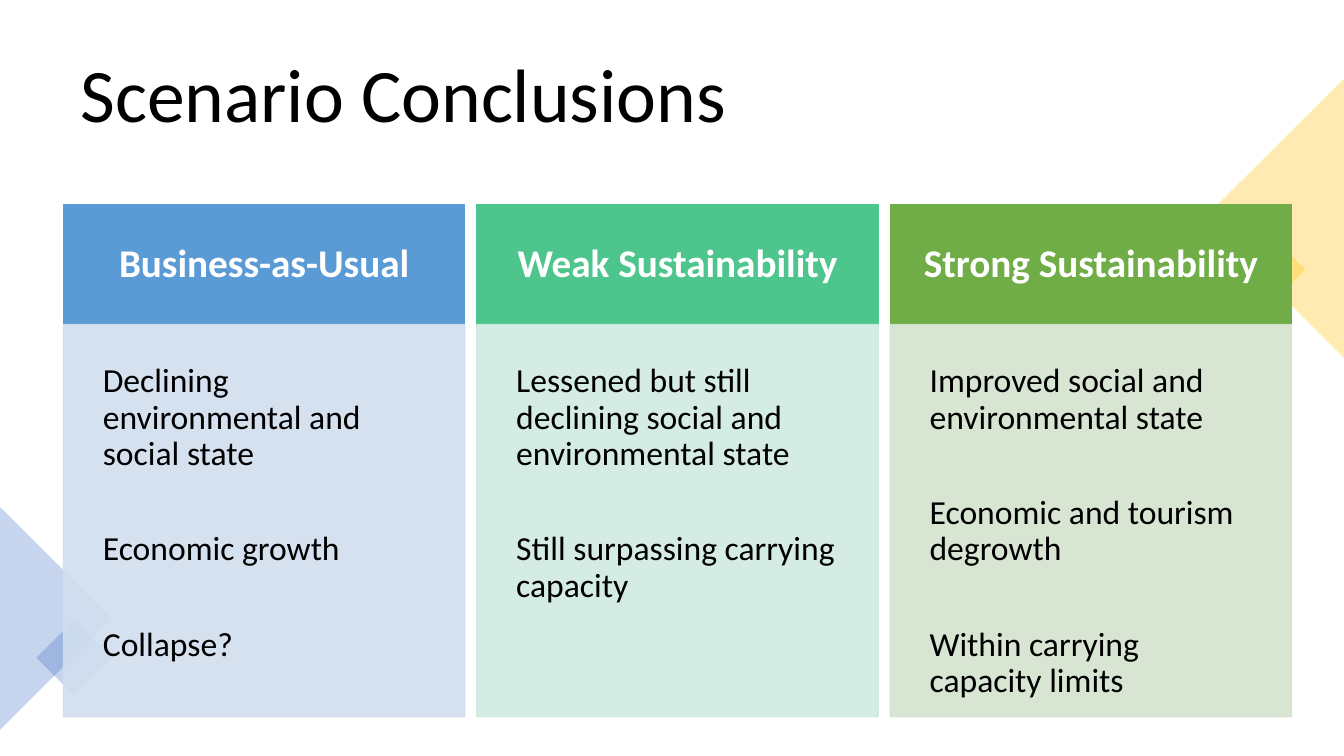
from lxml import etree
from pptx import Presentation, util as u
from pptx.dml.color import RGBColor
from pptx.enum import shapes, text
from pptx.oxml.ns import qn

BLACK = RGBColor(0x00, 0x00, 0x00)
WHITE = RGBColor(0xFF, 0xFF, 0xFF)
GOLD = RGBColor(0xFF, 0xC0, 0x00)
NAVY = RGBColor(0x44, 0x72, 0xC4)
BLUE = RGBColor(0x5B, 0x9B, 0xD5)
PALE_BLUE = RGBColor(0xD2, 0xDE, 0xEF)
TEAL = RGBColor(0x4D, 0xC5, 0x8D)
PALE_TEAL = RGBColor(0xD0, 0xEA, 0xE1)
GREEN = RGBColor(0x70, 0xAD, 0x47)
PALE_GREEN = RGBColor(0xD5, 0xE3, 0xCF)

SCENARIOS = [
    ("Business-as-Usual", BLUE, PALE_BLUE,
     ["Declining environmental and social state", "Economic growth", "Collapse?"]),
    ("Weak Sustainability", TEAL, PALE_TEAL,
     ["Lessened but still declining social and environmental state",
      "Still surpassing carrying capacity"]),
    ("Strong Sustainability", GREEN, PALE_GREEN,
     ["Improved social and environmental state", "Economic and tourism degrowth",
      "Within carrying capacity limits"]),
]
COLUMN_LEFT, COLUMN_STEP, COLUMN_WIDTH = 0.63, 4.1, 3.98
HEADER_TOP, HEADER_HEIGHT, BODY_HEIGHT = 2.03, 1.19, 3.89


def paint(fill, color, opacity):
    """Give a fill a solid colour with an opacity in percent."""
    fill.solid()
    fill.fore_color.rgb = color
    if opacity < 100:
        for node in fill._xPr.iter(qn("a:srgbClr")):
            etree.SubElement(node, qn("a:alpha"), val=str(opacity * 1000))


def write(box, lines, size, color=BLACK, bold=False, inset=0.1, after=0,
          align=text.PP_ALIGN.LEFT, anchor=text.MSO_ANCHOR.TOP):
    """Fill a shape with one paragraph per line."""
    frame = box.text_frame
    frame.word_wrap = True
    frame.vertical_anchor = anchor
    frame.margin_left = frame.margin_right = u.Inches(inset)
    frame.margin_top = frame.margin_bottom = u.Inches(min(inset, 0.39))
    for index, line in enumerate(lines):
        para = frame.add_paragraph() if index else frame.paragraphs[0]
        para.alignment = align
        para.line_spacing = 0.9
        para.space_after = u.Pt(after)
        span = para.add_run()
        span.text = line
        span.font.name = "Calibri"
        span.font.size = u.Pt(size)
        span.font.bold = bold
        span.font.color.rgb = color


class Page:
    def __init__(self, deck):
        self.shapes = deck.slides.add_slide(deck.slide_layouts[6]).shapes

    def title(self, wording):
        box = self.shapes.add_textbox(*map(u.Inches, (0.7, 0.35, 11.93, 1.24)))
        write(box, [wording], 54, anchor=text.MSO_ANCHOR.MIDDLE)

    def shape(self, kind, place, color, opacity=100, rotation=0, outlined=False):
        shape = self.shapes.add_shape(kind, *map(u.Inches, place))
        shape.shadow.inherit = False
        shape.rotation = rotation
        paint(shape.fill, color, opacity)
        if outlined:
            shape.line.width = u.Pt(1)
            paint(shape.line.fill, color, opacity)
        else:
            shape.line.fill.background()
        return shape

    def diamond(self, left, top, side, color):
        self.shape(shapes.MSO_SHAPE.RECTANGLE, (left, top, side, side), color, 30, 45)

    def triangle(self, place, color, rotation):
        self.shape(shapes.MSO_SHAPE.ISOSCELES_TRIANGLE, place, color, 30, rotation)

    def scenario(self, left, heading, strong, pale, points):
        header = self.shape(shapes.MSO_SHAPE.RECTANGLE,
                            (left, HEADER_TOP, COLUMN_WIDTH, HEADER_HEIGHT),
                            strong, outlined=True)
        write(header, [heading], 28, WHITE, bold=True, inset=0.31,
              align=text.PP_ALIGN.CENTER, anchor=text.MSO_ANCHOR.MIDDLE)
        body = self.shape(shapes.MSO_SHAPE.RECTANGLE,
                          (left, HEADER_TOP + HEADER_HEIGHT, COLUMN_WIDTH, BODY_HEIGHT),
                          pale, 90, outlined=True)
        write(body, points, 24, inset=0.39, after=42.3)


def main():
    deck = Presentation()
    deck.slide_width, deck.slide_height = u.Inches(13.33), u.Inches(7.5)
    page = Page(deck)
    page.title("Scenario Conclusions")
    page.diamond(12.09, 2.32, 0.71, GOLD)
    page.triangle((11.25, 1.47, 2.77, 1.39), GOLD, 270)
    page.triangle((-0.55, 5.58, 2.21, 1.11), NAVY, 90)
    page.diamond(0.47, 6.26, 0.53, NAVY)
    for index, scenario in enumerate(SCENARIOS):
        page.scenario(COLUMN_LEFT + index * COLUMN_STEP, *scenario)
    deck.save("out.pptx")


if __name__ == "__main__":
    main()
